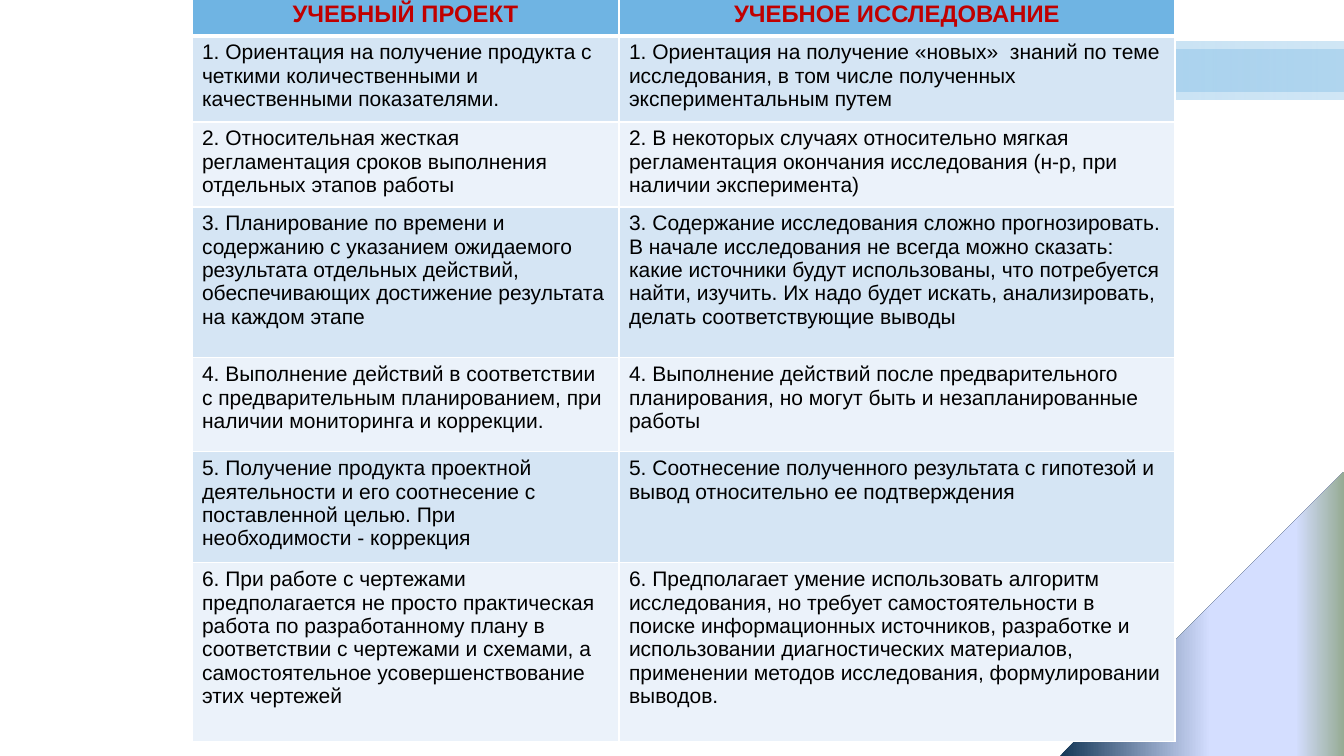
from lxml.etree import SubElement
from pptx import Presentation
from pptx.dml.color import RGBColor
from pptx.enum.shapes import MSO_SHAPE
from pptx.enum.text import PP_ALIGN
from pptx.oxml.ns import qn
from pptx.util import Pt

PX = 12192000 / 1344
COLORS = {
    "white": "FFFFFF", "black": "000000", "red": "C00000",
    "blue": "6FB4E3", "band_dark": "D5E5F4", "band_light": "EBF2FA",
    "navy": "143756", "lilac": "D4DEFF", "sage": "96AB94",
}
COLUMNS = [427, 556]
ROWS = [40, 86, 85, 151, 94, 111, 179]
COMPARISON = [
    ("УЧЕБНЫЙ ПРОЕКТ", "УЧЕБНОЕ ИССЛЕДОВАНИЕ"),
    ("1. Ориентация на получение продукта с четкими количественными и "
     "качественными показателями.",
     "1. Ориентация на получение «новых»  знаний по теме исследования, "
     "в том числе полученных экспериментальным путем"),
    ("2. Относительная жесткая регламентация сроков выполнения отдельных "
     "этапов работы",
     "2. В некоторых случаях относительно мягкая регламентация окончания "
     "исследования (н-р, при наличии эксперимента)"),
    ("3. Планирование по времени и содержанию с указанием ожидаемого "
     "результата отдельных действий, обеспечивающих достижение результата "
     "на каждом этапе",
     "3. Содержание исследования сложно прогнозировать. В начале "
     "исследования не всегда можно сказать: какие источники будут "
     "использованы, что потребуется найти, изучить. Их надо будет искать, "
     "анализировать, делать соответствующие выводы"),
    ("4. Выполнение действий в соответствии с предварительным "
     "планированием, при наличии мониторинга и коррекции.",
     "4. Выполнение действий после предварительного планирования, но могут "
     "быть и незапланированные работы"),
    ("5. Получение продукта проектной деятельности и его соотнесение с "
     "поставленной целью. При необходимости - коррекция",
     "5. Соотнесение полученного результата с гипотезой и вывод "
     "относительно ее подтверждения"),
    ("6. При работе с чертежами предполагается не просто практическая "
     "работа по разработанному плану в соответствии с чертежами и схемами, "
     "а самостоятельное усовершенствование этих чертежей",
     "6. Предполагает умение использовать алгоритм исследования, но требует "
     "самостоятельности в поиске информационных источников, разработке и "
     "использовании диагностических материалов, применении методов "
     "исследования, формулировании выводов."),
]


def px(n):
    return round(n * PX)


def rgb(name):
    return RGBColor.from_string(COLORS[name])


class Deck:
    font = "Arial"

    def __init__(self, prs):
        self.s = prs.slides.add_slide(prs.slide_layouts[6])

    def gradient_shape(self, kind, x, y, w, h, stops, angle, rotation=0):
        """Stops are (position %, colour, opacity %)."""
        sp = self.s.shapes.add_shape(kind, px(x), px(y), px(w), px(h))
        sp.rotation = rotation
        sp.shadow.inherit = False
        sp.line.fill.background()
        sp.fill.gradient()
        grad = sp.fill._xPr.find(qn("a:gradFill"))
        for child in list(grad):
            grad.remove(child)
        grad.set("rotWithShape", "1")
        stop_list = SubElement(grad, qn("a:gsLst"))
        for pos, color, opacity in stops:
            gs = SubElement(stop_list, qn("a:gs"), pos=str(pos * 1000))
            clr = SubElement(gs, qn("a:srgbClr"), val=COLORS[color])
            if opacity < 100:
                SubElement(clr, qn("a:alpha"), val=str(opacity * 1000))
        SubElement(grad, qn("a:lin"), ang=str(angle * 60000), scaled="0")

    def borders(self, cell, color, widths):
        tc_pr = cell._tc.get_or_add_tcPr()
        for side, width in zip("LRTB", widths):
            ln = SubElement(tc_pr, qn(f"a:ln{side}"), w=str(Pt(width)))
            fill = SubElement(ln, qn("a:solidFill"))
            SubElement(fill, qn("a:srgbClr"), val=COLORS[color])

    def cell(self, cell, text, fill, size, color, bold, align, widths):
        self.borders(cell, "white", widths)
        cell.fill.solid()
        cell.fill.fore_color.rgb = rgb(fill)
        cell.text = text
        p = cell.text_frame.paragraphs[0]
        p.alignment = align
        p.font.name = self.font
        p.font.size = Pt(size)
        p.font.bold = bold
        p.font.color.rgb = rgb(color)

    def table(self, x, y, columns, rows, data):
        table = self.s.shapes.add_table(
            len(rows), len(columns), px(x), px(y),
            px(sum(columns)), px(sum(rows))).table
        for column, width in zip(table.columns, columns):
            column.width = px(width)
        for i, (row, height) in enumerate(zip(table.rows, rows)):
            row.height = px(height)
            if i == 0:
                style = ("blue", 17, "red", True, PP_ALIGN.CENTER, (1, 1, 1, 3))
            else:
                band = "band_dark" if i % 2 else "band_light"
                top = 3 if i == 1 else 1
                style = (band, 15, "black", False, PP_ALIGN.LEFT, (1, 1, top, 1))
            for cell, text in zip(row.cells, data[i]):
                self.cell(cell, text, *style)


def main():
    prs = Presentation()
    prs.slide_width, prs.slide_height = px(1344), px(756)
    deck = Deck(prs)

    # Fading bands behind the table
    fade = [(0, "white", 100), (100, "blue", 32)]
    for x, y, h in [(313, 42, 58), (291, 50, 42)]:
        deck.gradient_shape(MSO_SHAPE.RECTANGLE, x, y, 1344 - x, h, fade, 0)

    # Corner triangle
    deck.gradient_shape(
        MSO_SHAPE.RIGHT_TRIANGLE, 1060, 472, 284, 284,
        [(0, "navy", 100), (53, "lilac", 100), (83, "lilac", 100),
         (100, "sage", 100)], 90, rotation=270)

    # Comparison table
    deck.table(192, -4, COLUMNS, ROWS, COMPARISON)
    prs.save("out.pptx")


if __name__ == "__main__":
    main()
